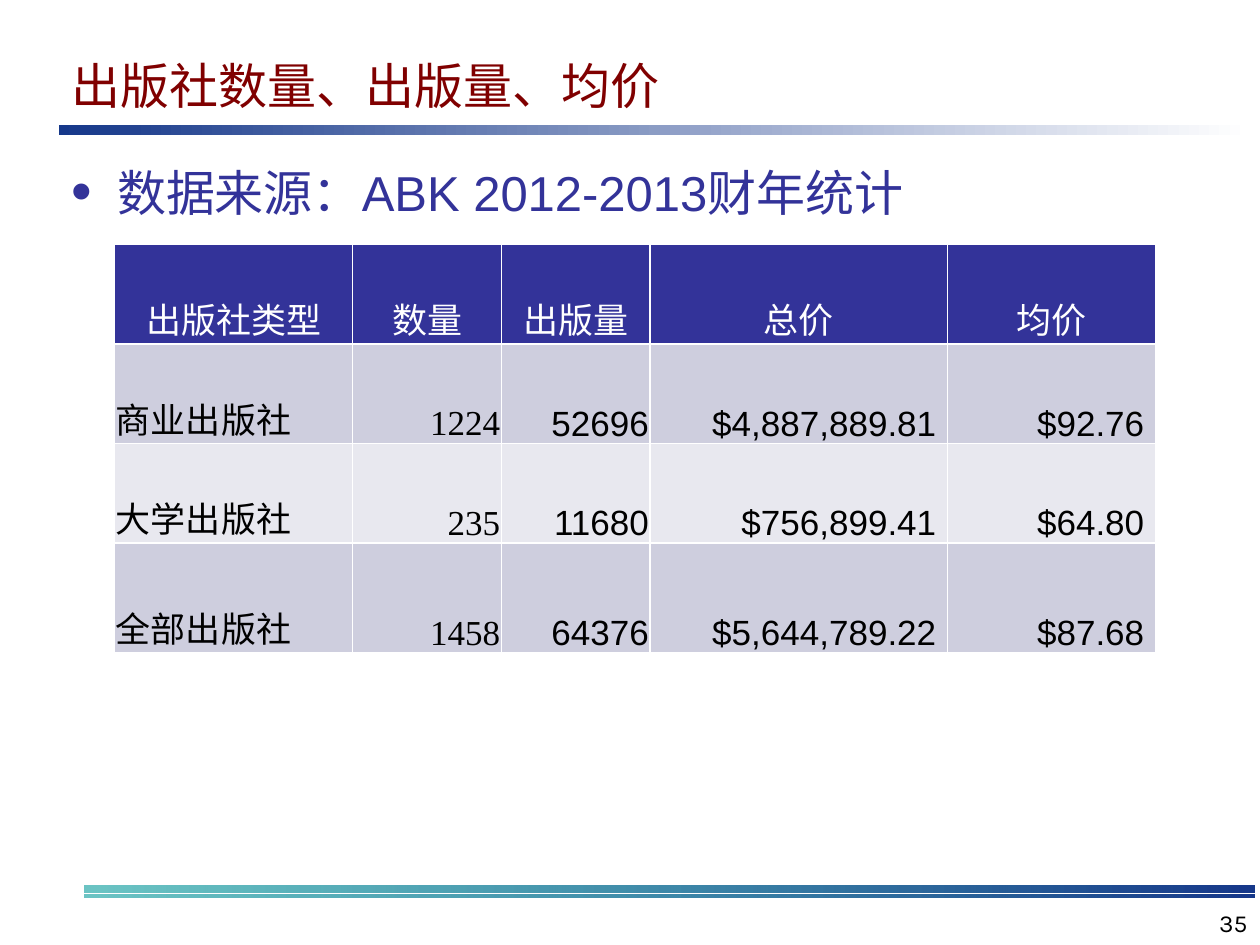
from lxml import etree
from pptx import Presentation
from pptx import util as u
from pptx.dml.color import RGBColor
from pptx.enum import shapes, text
from pptx.oxml import ns

COLORS = {
    "title": "800000",
    "indigo": "333399",
    "navy": "16388A",
    "teal": "009999",
    "white": "FFFFFF",
    "black": "000000",
    "band": "CECEDE",
    "light": "E8E8EF",
}
HEADERS = ["出版社类型", "数量", "出版量", "总价", "均价"]
ROWS = [
    ["商业出版社", "1224", "52696", "$4,887,889.81 ", "$92.76 "],
    ["大学出版社", "235", "11680", "$756,899.41 ", "$64.80 "],
    ["全部出版社", "1458", "64376", "$5,644,789.22 ", "$87.68 "],
]
COLUMN_WIDTHS = [1.89, 1.18, 1.18, 2.36, 1.65]
ROW_HEIGHTS = [0.79, 0.79, 0.79, 0.87]


def color(name):
    return RGBColor.from_string(COLORS[name])


def inches(box):
    return [u.Inches(length) for length in box]


def move(shape, box):
    shape.left, shape.top, shape.width, shape.height = inches(box)


def add_span(para, words, size, font, shade):
    span = para.add_run()
    span.text = words
    span.font.size = u.Pt(size)
    span.font.name = font
    span.font.color.rgb = color(shade)


def add_gradient_bar(page, box, start, end, start_alpha=100):
    bar = page.shapes.add_shape(shapes.MSO_SHAPE.RECTANGLE, *inches(box))
    bar.shadow.inherit = False
    bar.line.fill.background()
    bar.fill.gradient()
    bar.fill.gradient_angle = 0
    for stop, name in zip(bar.fill.gradient_stops, (start, end)):
        stop.color.rgb = color(name)
    if start_alpha < 100:
        first = next(bar.fill._xPr.iter(ns.qn("a:srgbClr")))
        etree.SubElement(first, ns.qn("a:alpha"), val=str(start_alpha * 1000))


def add_rules(page):
    add_gradient_bar(page, (0.47, 0.99, 9.45, 0.08), "navy", "white")
    for top, height in ((7.03, 0.05), (7.1, 0.02)):
        add_gradient_bar(page, (0.67, top, 9.29, height), "teal", "navy", 58)


def fill_title(page, box):
    title = page.shapes.title
    move(title, box)
    title.text_frame.vertical_anchor = text.MSO_ANCHOR.BOTTOM
    para = title.text_frame.paragraphs[0]
    para.alignment = text.PP_ALIGN.LEFT
    add_span(para, "出版社数量、出版量、均价", 28, "Arial", "title")


def fill_body(page, box):
    body = page.placeholders[1]
    move(body, box)
    para = body.text_frame.paragraphs[0]
    para.line_spacing = 1.1
    para.space_before = u.Pt(0)
    properties = para._p.get_or_add_pPr()
    properties.set("marL", str(u.Inches(0.36)))
    properties.set("indent", str(-u.Inches(0.36)))
    etree.SubElement(properties, ns.qn("a:buSzPct"), val="120000")
    etree.SubElement(properties, ns.qn("a:buChar"), char="•")
    add_span(para, "数据来源：ABK 2012-2013财年统计", 28, "Arial", "indigo")


def add_page_number(page, box):
    number = page.shapes.add_textbox(*inches(box))
    number.text_frame.word_wrap = True
    number.text_frame.vertical_anchor = text.MSO_ANCHOR.MIDDLE
    para = number.text_frame.paragraphs[0]
    para.alignment = text.PP_ALIGN.RIGHT
    add_span(para, "35", 14, "Karla", "black")


def add_borders(cell):
    properties = cell._tc.get_or_add_tcPr()
    for index, side in enumerate(("lnL", "lnR", "lnT", "lnB")):
        line = etree.Element(ns.qn(f"a:{side}"), w=str(u.Pt(1)))
        fill = etree.SubElement(line, ns.qn("a:solidFill"))
        etree.SubElement(fill, ns.qn("a:srgbClr"), val=COLORS["white"])
        properties.insert(index, line)


def fill_cell(cell, words, row, column):
    cell.fill.solid()
    cell.fill.fore_color.rgb = color(
        "indigo" if row == 0 else "band" if row % 2 else "light")
    add_borders(cell)
    cell.vertical_anchor = text.MSO_ANCHOR.BOTTOM
    cell.margin_left = cell.margin_right = cell.margin_top = u.Inches(0.01)
    cell.margin_bottom = 0
    para = cell.text_frame.paragraphs[0]
    if row == 0:
        para.alignment = text.PP_ALIGN.CENTER
    else:
        para.alignment = text.PP_ALIGN.RIGHT if column else text.PP_ALIGN.LEFT
    font = "Arial" if row and column > 1 else "Times New Roman"
    add_span(para, words, 20, font, "black" if row else "white")


def add_publisher_table(page, box):
    records = [HEADERS] + ROWS
    table = page.shapes.add_table(len(records), len(HEADERS), *inches(box)).table
    for column, width in zip(table.columns, COLUMN_WIDTHS):
        column.width = u.Inches(width)
    for row, height in zip(table.rows, ROW_HEIGHTS):
        row.height = u.Inches(height)
    for row, record in enumerate(records):
        for column, words in enumerate(record):
            fill_cell(table.cell(row, column), words, row, column)


def main():
    deck = Presentation()
    deck.slide_width, deck.slide_height = u.Inches(10), u.Inches(7.5)
    page = deck.slides.add_slide(deck.slide_layouts[1])
    add_rules(page)
    fill_title(page, (0.47, 0.21, 7.28, 0.75))
    fill_body(page, (0.47, 1.19, 9.25, 5.74))
    add_page_number(page, (9.13, 7.14, 0.87, 0.36))
    add_publisher_table(page, (0.91, 1.94, 8.26, 3.24))
    deck.save("out.pptx")


if __name__ == "__main__":
    main()
